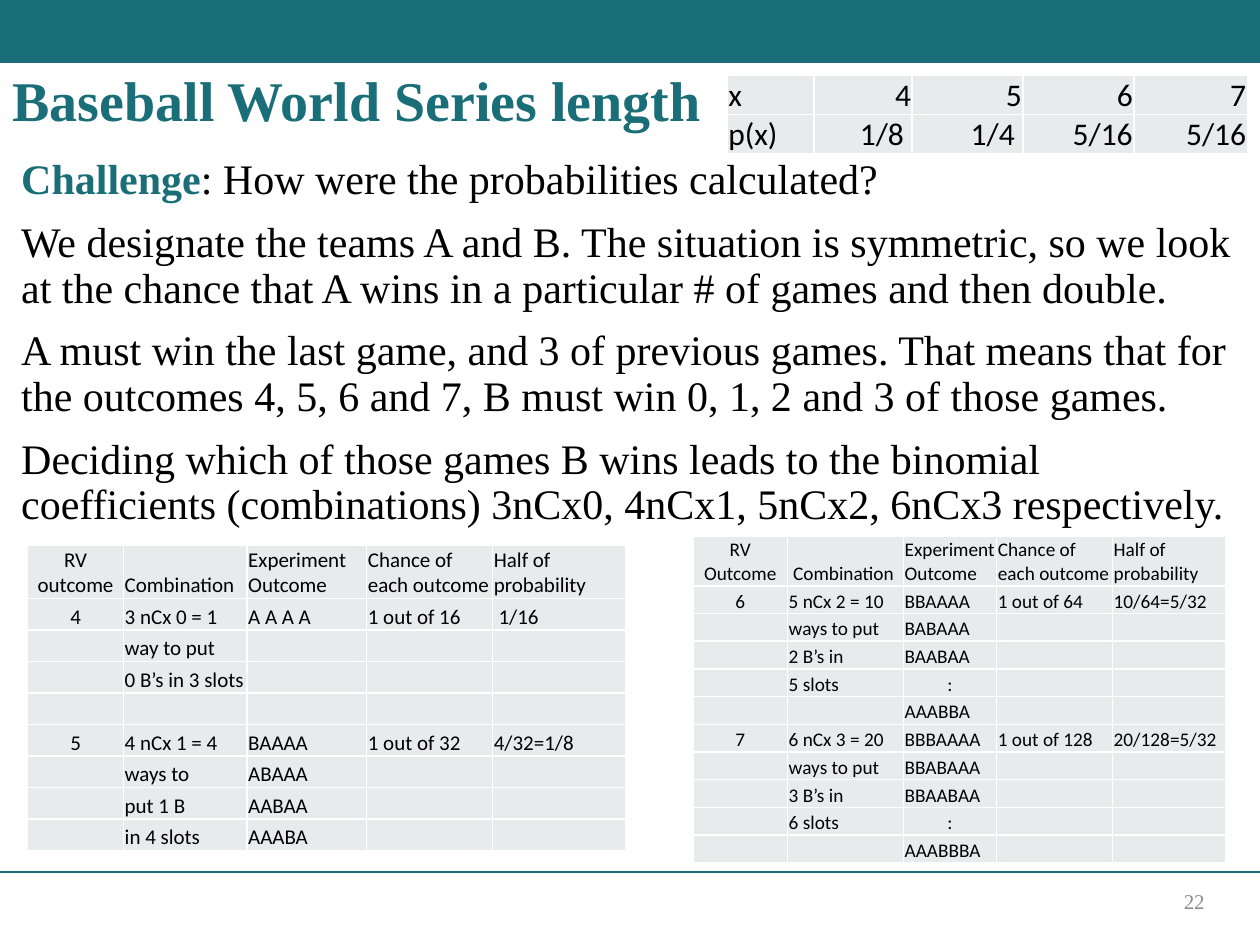
from lxml.etree import SubElement
from pptx import Presentation
from pptx.dml.color import RGBColor
from pptx.enum.shapes import MSO_CONNECTOR, MSO_SHAPE
from pptx.enum.text import MSO_ANCHOR, PP_ALIGN
from pptx.oxml.ns import qn
from pptx.util import Inches, Pt

COLORS = {"teal": "196E78", "cell": "E8EBEC", "border": "FFFFFF", "text": "000000", "number": "8C8C8C"}


def style(run, size, color, font="Times New Roman", bold=False):
    run.font.size = Pt(size)
    run.font.name = font
    run.font.bold = bold
    run.font.color.rgb = RGBColor.from_string(COLORS[color])


def add_grid(left, top, widths, heights, rows, size, align):
    frame = slide.shapes.add_table(len(rows), len(widths), Inches(left), Inches(top),
                                   Inches(sum(widths)), Inches(sum(heights)))
    grid = frame.table
    for column, width in zip(grid.columns, widths):
        column.width = Inches(width)
    for r, (texts, height) in enumerate(zip(rows, heights)):
        grid.rows[r].height = Inches(height)
        for c, text in enumerate(texts):
            cell = grid.cell(r, c)
            cell.margin_left = cell.margin_right = cell.margin_top = Inches(0.01)
            cell.margin_bottom = 0
            cell.vertical_anchor = MSO_ANCHOR.BOTTOM
            properties = cell._tc.get_or_add_tcPr()
            for side in ("a:lnL", "a:lnR", "a:lnT", "a:lnB"):
                border = SubElement(properties, qn(side), w=str(Pt(1)))
                fill = SubElement(border, qn("a:solidFill"))
                SubElement(fill, qn("a:srgbClr"), val=COLORS["border"])
            cell.fill.solid()
            cell.fill.fore_color.rgb = RGBColor.from_string(COLORS["cell"])
            paragraph = cell.text_frame.paragraphs[0]
            paragraph.alignment = align(c, text)
            if text:
                paragraph.text = text
                style(paragraph.runs[0], size, "text", "Calibri")
            else:
                SubElement(paragraph._p, qn("a:endParaRPr"), sz=str(size * 100))


prs = Presentation()
prs.slide_width = Inches(10)
prs.slide_height = Inches(7.5)
slide = prs.slides.add_slide(prs.slide_layouts[5])

band = slide.shapes.add_shape(MSO_SHAPE.RECTANGLE, 0, 0, Inches(10), Inches(0.5))
band.shadow.inherit = False
band.fill.solid()
band.fill.fore_color.rgb = RGBColor.from_string(COLORS["teal"])
band.line.fill.background()

footer_rule = slide.shapes.add_connector(MSO_CONNECTOR.STRAIGHT, 0, Inches(6.92), Inches(10), Inches(6.92))
footer_rule.line.color.rgb = RGBColor.from_string(COLORS["teal"])
footer_rule.line.width = Pt(1)
SubElement(footer_rule._element.spPr, qn("a:effectLst"))

title = slide.shapes.title
title.left, title.top, title.width, title.height = 0, Inches(0.51), Inches(5.67), Inches(0.62)
title.text_frame.text = "Baseball World Series length"
title.text_frame.vertical_anchor = MSO_ANCHOR.MIDDLE
heading = title.text_frame.paragraphs[0]
heading.alignment = PP_ALIGN.LEFT
heading.line_spacing = 0.9
style(heading.runs[0], 32, "teal", bold=True)

explanation = slide.shapes.add_textbox(Inches(0.07), Inches(1.21), Inches(9.83), Inches(3.19)).text_frame
explanation.word_wrap = True
points = [
    ["Challenge", ": How were the probabilities calculated?"],
    ["We designate the teams A and B. The situation is symmetric, so we look "
     "at the chance that A wins in a particular # of games and then double."],
    ["A must win the last game, and 3 of previous games. That means that for "
     "the outcomes 4, 5, 6 and 7, B must win 0, 1, 2 and 3 of those games."],
    ["Deciding which of those games B wins leads to the binomial "
     "coefficients (combinations) 3nCx0, 4nCx1, 5nCx2, 6nCx3 respectively."],
]
for i, parts in enumerate(points):
    point = explanation.paragraphs[0] if i == 0 else explanation.add_paragraph()
    point.line_spacing = 0.9
    point.space_before = Pt(10 if i else 0)
    for part in parts:
        run = point.add_run()
        run.text = part
        lead = part == "Challenge"
        style(run, 24, "teal" if lead else "text", bold=lead)

distribution = [
    ["x", "4", "5", "6", "7"],
    ["p(x)", "1/8 ", "1/4 ", "5/16", "5/16"],
]
add_grid(5.77, 0.6, [0.69, 0.78, 0.88, 0.88, 0.9], [0.31] * 2, distribution, 18,
         lambda c, text: PP_ALIGN.RIGHT if c else PP_ALIGN.LEFT)

short_series = [
    ["RV outcome", "Combination ", "Experiment Outcome ", "Chance of each outcome", "Half of probability"],
    ["4", "3 nCx 0 = 1", "A A A A", "1 out of 16", " 1/16"],
    ["", "way to put", "", "", ""],
    ["", "0 B’s in 3 slots", "", "", ""],
    ["", "", "", "", ""],
    ["5", "4 nCx 1 = 4", "BAAAA", "1 out of 32", "4/32=1/8"],
    ["", "ways to", "ABAAA", "", ""],
    ["", "put 1 B", "AABAA", "", ""],
    ["", "in 4 slots", "AAABA", "", ""],
]
long_series = [
    ["RV Outcome", " Combination", "Experiment Outcome", "Chance of each outcome", "Half of probability"],
    ["6", "5 nCx 2 = 10", "BBAAAA", "1 out of 64", "10/64=5/32"],
    ["", "ways to put", "BABAAA", "", ""],
    ["", "2 B’s in", "BAABAA", "", ""],
    ["", "5 slots", ":", "", ""],
    ["", "", "AAABBA", "", ""],
    ["7", "6 nCx 3 = 20", "BBBAAAA", "1 out of 128", "20/128=5/32"],
    ["", "ways to put", "BBABAAA", "", ""],
    ["", "3 B’s in", "BBAABAA", "", ""],
    ["", "6 slots", ":", "", ""],
    ["", "", "AAABBBA", "", ""],
]
for left, top, widths, heights, rows, size in [
    (0.22, 4.33, [0.76, 0.98, 0.95, 1, 1.06], [0.42] + [0.25] * 8, short_series, 12),
    (5.5, 4.26, [0.75, 0.92, 0.74, 0.92, 0.9], [0.39] + [0.22] * 10, long_series, 11),
]:
    add_grid(left, top, widths, heights, rows, size,
             lambda c, text: PP_ALIGN.CENTER if c == 0 or text == ":" else PP_ALIGN.LEFT)

page_number = slide.shapes.add_textbox(Inches(7.06), Inches(6.95), Inches(2.6), Inches(0.4)).text_frame
page_number.word_wrap = True
page_number.vertical_anchor = MSO_ANCHOR.MIDDLE
page_number.text = "22"
page_number.paragraphs[0].alignment = PP_ALIGN.RIGHT
style(page_number.paragraphs[0].runs[0], 12, "number")

prs.save("out.pptx")
